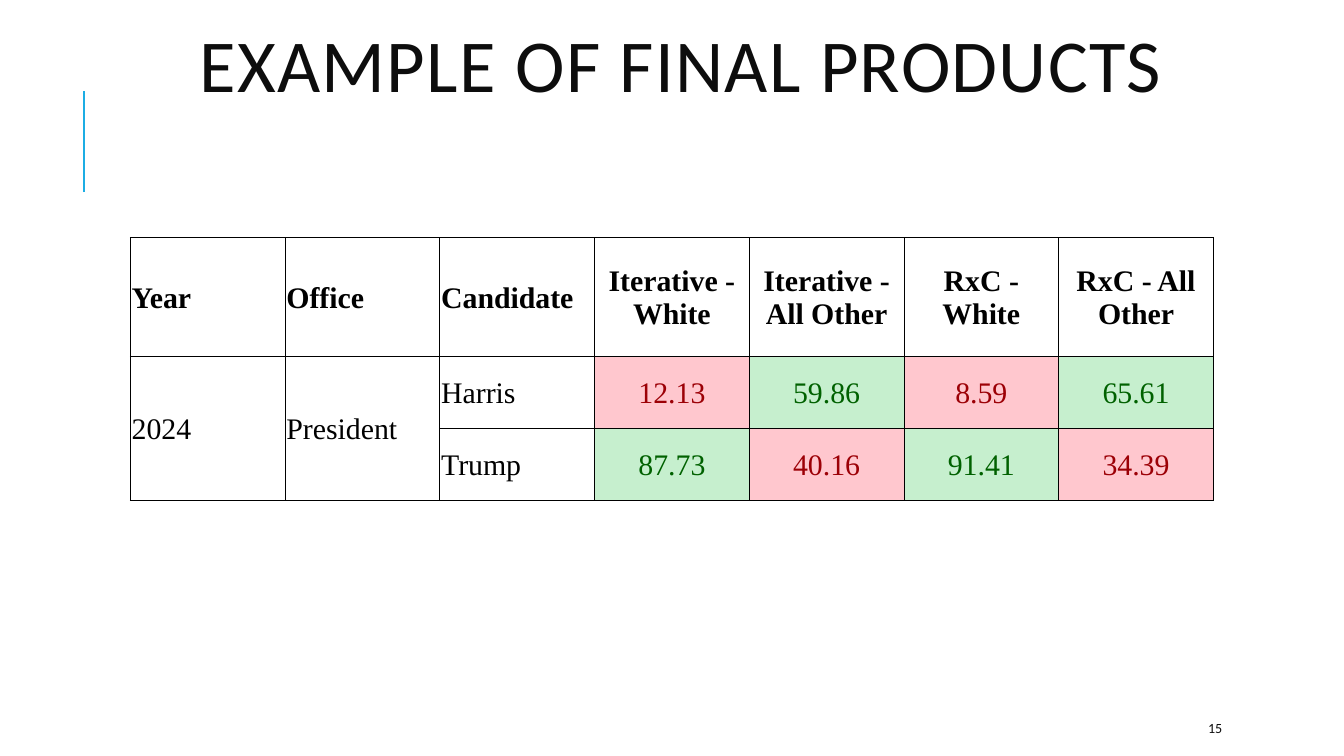
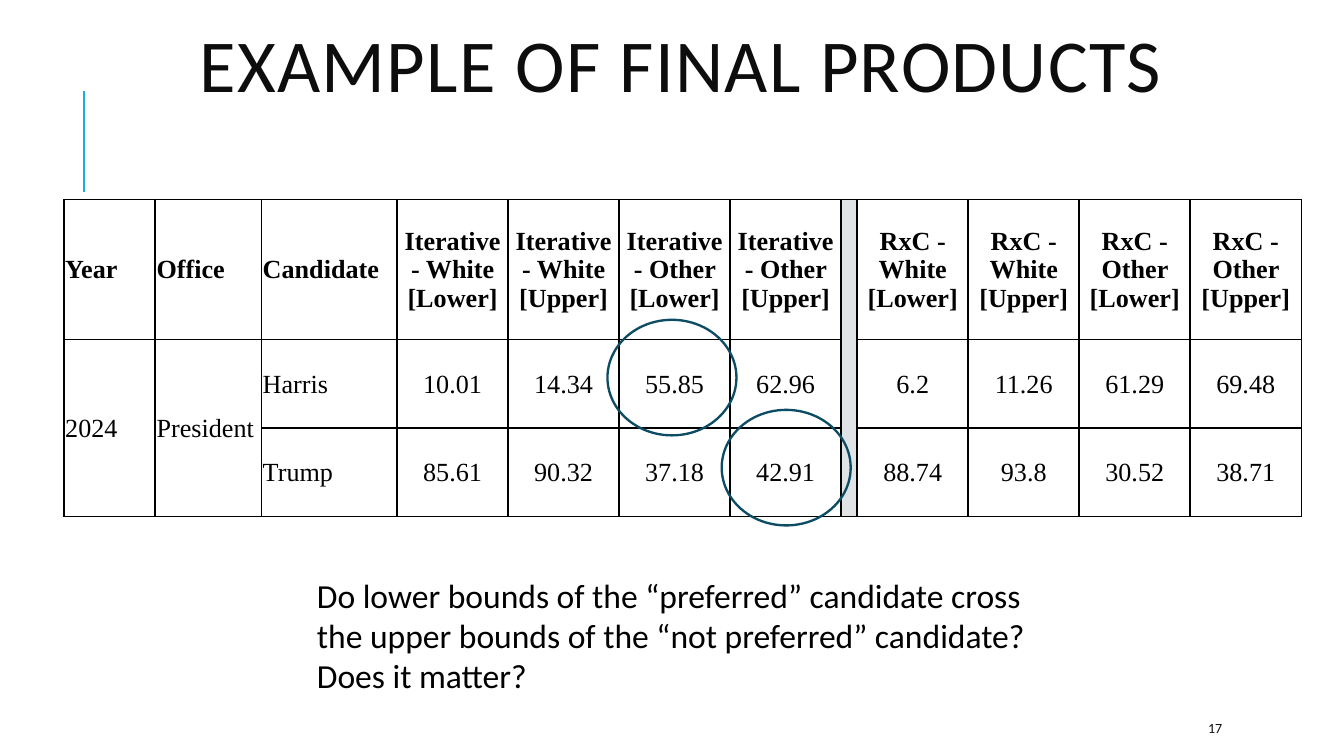
from lxml import etree
from pptx import Presentation, util as u
from pptx.dml.color import RGBColor
from pptx.enum import shapes, text
from pptx.oxml import ns

PX = u.Inches(1) // 200
BLACK = RGBColor(0x00, 0x00, 0x00)
INK = RGBColor(0x0D, 0x0D, 0x0D)
BLUE = RGBColor(0x1C, 0xAD, 0xE4)
TEAL = RGBColor(0x0C, 0x4C, 0x64)
GRAY = RGBColor(0xDF, 0xE3, 0xE5)
RED = RGBColor(0x9C, 0x00, 0x06)
PINK = RGBColor(0xFF, 0xC7, 0xCE)
GREEN = RGBColor(0x00, 0x61, 0x00)
MINT = RGBColor(0xC6, 0xEF, 0xCE)
SANS, SERIF = "Calibri", "Times New Roman"
LEFT, MID = text.PP_ALIGN.LEFT, text.PP_ALIGN.CENTER
TITLE = "EXAMPLE OF FINAL PRODUCTS"


def px(*nums):
    return [u.Emu(int(n * PX)) for n in nums]


class Deck:
    def __init__(self, wide, high):
        self.file = Presentation()
        self.file.slide_width, self.file.slide_height = px(wide, high)
        self.slide = None

    def page(self, title, num):
        self.slide = self.file.slides.add_slide(self.file.slide_layouts[6])
        self.rule(125, 286, 125, 136)
        head = self.text(title, (96, 47, 1836, 116), 40, INK, MID, True)
        head.line_spacing = 0.8
        head._p.pPr.find(ns.qn("a:defRPr")).set("spc", "75")
        self.text(str(num), (1778, 1061, 160, 46), 7.5, INK, mid=True)

    def rule(self, *ends):
        line = self.slide.shapes.add_connector(shapes.MSO_CONNECTOR.STRAIGHT, *px(*ends))
        line.line.color.rgb = BLUE
        line.line.width = u.Pt(1.5)
        etree.SubElement(line._element.spPr, ns.qn("a:effectLst"))

    def style(self, para, size, color, face=SANS, align=LEFT, bold=False):
        para.alignment = align
        font = para.font
        font.name, font.size, font.bold = face, u.Pt(size), bold
        font.color.rgb = color

    def text(self, words, box, size, color, align=LEFT, mid=False, grow=False):
        frame = self.slide.shapes.add_textbox(*px(*box)).text_frame
        frame.word_wrap = True
        if mid:
            frame.vertical_anchor = text.MSO_ANCHOR.MIDDLE
        if grow:
            frame.auto_size = text.MSO_AUTO_SIZE.SHAPE_TO_FIT_TEXT
        para = frame.paragraphs[0]
        para.text = words
        self.style(para, size, color, align=align)
        return para

    def ring(self, *box):
        ring = self.slide.shapes.add_shape(shapes.MSO_SHAPE.OVAL, *px(*box))
        ring.shadow.inherit = False
        ring.fill.background()
        ring.line.color.rgb = TEAL
        ring.line.width = u.Pt(1.25)

    def edge(self, cell, width, sides):
        props = cell._tc.get_or_add_tcPr()
        for side in "LRTB":
            line = etree.SubElement(props, ns.qn("a:ln" + side), w=str(u.Pt(width)))
            if side in sides:
                fill = etree.SubElement(line, ns.qn("a:solidFill"))
                etree.SubElement(fill, ns.qn("a:srgbClr"), val=str(BLACK))
            else:
                etree.SubElement(line, ns.qn("a:noFill"))

    def cell(self, cell, words, size, align, bold, color, fill):
        cell.margin_left, cell.margin_right, cell.margin_top, cell.margin_bottom = px(2, 2, 2, 0)
        cell.vertical_anchor = text.MSO_ANCHOR.MIDDLE
        para = cell.text_frame.paragraphs[0]
        if words:
            para.text = words
        self.style(para, size, color, SERIF, align, bold)
        if fill is None:
            cell.fill.background()
        else:
            cell.fill.solid()
            cell.fill.fore_color.rgb = fill

    def table(self, data, box, cols, rows, size, width, gap=None, shade=False):
        frame = self.slide.shapes.add_table(len(rows), len(cols), *px(*box))
        grid = frame.table
        grid.first_row = grid.horz_banding = False
        rest = (box[2] - sum(filter(None, cols))) / cols.count(None)
        for col, wide in zip(grid.columns, cols):
            col.width = px(wide or rest)[0]
        for row, high in zip(grid.rows, rows):
            row.height = px(high)[0]
        for r, line in enumerate(data):
            for c, words in enumerate(line):
                color, fill, sides = BLACK, None, "LRTB"
                if c == gap:
                    fill = GRAY
                    sides = "LR" + "T" * (r == 0) + "B" * (r == len(data) - 1)
                elif shade and r > 0 and c > 2:
                    color, fill = (GREEN, MINT) if float(words) > 50 else (RED, PINK)
                cell = grid.cell(r, c)
                self.edge(cell, width, sides)
                self.cell(cell, words, size, MID if c > 2 else LEFT, r == 0, color, fill)
        for c in range(2):
            grid.cell(1, c).merge(grid.cell(2, c))


def points(deck):
    deck.page(TITLE, 15)
    data = [
        ["Year", "Office", "Candidate", "Iterative - White", "Iterative - All Other",
         "RxC - White", "RxC - All Other"],
        ["2024", "President", "Harris", "12.13", "59.86", "8.59", "65.61"],
        ["", "", "Trump", "87.73", "40.16", "91.41", "34.39"],
    ]
    deck.table(data, (194, 354, 1612, 391), [None] * 7, [177, 107, 107], 16, 0.5, shade=True)


def bounds(deck):
    deck.page(TITLE, 17)
    heads = [[f"{kind} - {group} [{end}]" for group in ("White", "Other")
              for end in ("Lower", "Upper")] for kind in ("Iterative", "RxC")]
    data = [
        ["Year", "Office", "Candidate", *heads[0], "", *heads[1]],
        ["2024", "President", "Harris", "10.01", "14.34", "55.85", "62.96", "",
         "6.2", "11.26", "61.29", "69.48"],
        ["", "", "Trump", "85.61", "90.32", "37.18", "42.91", "",
         "88.74", "93.8", "30.52", "38.71"],
    ]
    cols = [136, 158, 202, *[None] * 4, 24, *[None] * 4]
    deck.table(data, (95, 297, 1842, 472), cols, [208, 132, 132], 14, 1, gap=7)
    deck.text("Do lower bounds of the “preferred” candidate cross the upper bounds of the "
              "“not preferred” candidate? Does it matter?",
              (452, 845, 1094, 202), 18, BLACK, grow=True)
    for left, top in ((904, 476), (1074, 610)):
        deck.ring(left, top, 192, 172)


def main():
    deck = Deck(2000, 1125)
    points(deck)
    bounds(deck)
    deck.file.save("out.pptx")


if __name__ == "__main__":
    main()
